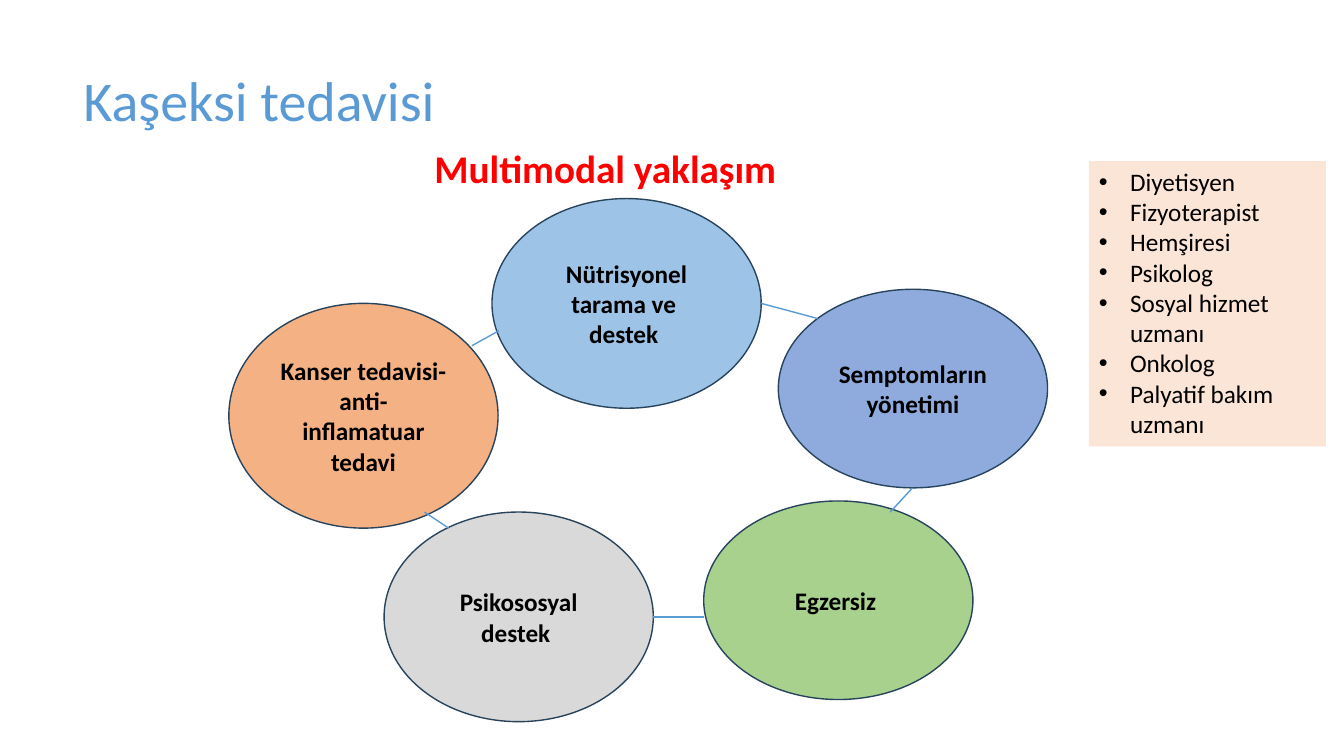
import pptx
import pptx.util
import pptx.dml.color
import pptx.enum.shapes
import pptx.enum.text
import pptx.oxml
import pptx.oxml.ns
from lxml import etree

PX = 9144
COLORS = {
    "title": "5B9BD5", "accent": "FF0000", "text": "000000",
    "outline": "28445D", "link": "5B9BD5", "team": "FBE5D6",
    "nutrition": "9DC3E6", "cancer": "F4B183", "exercise": "A9D18E",
    "symptoms": "8FAADC", "psychosocial": "D9D9D9",
}
ALIGN = pptx.enum.text.PP_ALIGN
ANCHOR = pptx.enum.text.MSO_ANCHOR
SHAPE = pptx.enum.shapes.MSO_SHAPE


def px(*lengths):
    return [pptx.util.Emu(length * PX) for length in lengths]


def color(name):
    return pptx.dml.color.RGBColor.from_string(COLORS[name])


class SlideBuilder:
    font = "Calibri"
    body_size = 18

    def __init__(self, slide):
        self.slide = slide

    def add_lines(self, frame, lines, size, ink, bold=False, align=ALIGN.LEFT,
                  anchor=ANCHOR.TOP):
        frame.word_wrap = True
        frame.vertical_anchor = anchor
        for index, line in enumerate(lines):
            paragraph = frame.add_paragraph() if index else frame.paragraphs[0]
            paragraph.alignment = align
            run = paragraph.add_run()
            run.text = line
            run.font.name = self.font
            run.font.size = pptx.util.Pt(size)
            run.font.bold = bold
            run.font.color.rgb = color(ink)

    def text(self, box, line, size, ink, **style):
        label = self.slide.shapes.add_textbox(*px(*box))
        self.add_lines(label.text_frame, [line], size, ink, **style)
        return label

    def panel(self, kind, box, fill):
        panel = self.slide.shapes.add_shape(kind, *px(*box))
        panel.shadow.inherit = False
        panel.fill.solid()
        panel.fill.fore_color.rgb = color(fill)
        panel.line.fill.background()
        return panel

    def ellipse(self, box, fill, lines):
        ellipse = self.panel(SHAPE.OVAL, box, fill)
        ellipse.line.color.rgb = color("outline")
        ellipse.line.width = pptx.util.Pt(1)
        self.add_lines(ellipse.text_frame, lines, self.body_size, "text", bold=True,
                       align=ALIGN.CENTER, anchor=ANCHOR.MIDDLE)

    def link(self, start, end):
        link = self.slide.shapes.add_connector(
            pptx.enum.shapes.MSO_CONNECTOR.STRAIGHT, *px(*start, *end))
        link.line.color.rgb = color("link")
        link.line.width = pptx.util.Pt(1)
        etree.SubElement(link._element.spPr, pptx.oxml.ns.qn("a:effectLst"))

    def bullets(self, box, fill, items):
        panel = self.panel(SHAPE.RECTANGLE, box, fill)
        self.add_lines(panel.text_frame, items, self.body_size, "text")
        indent = px(31)[0]
        for paragraph in panel.text_frame.paragraphs:
            properties = paragraph._p.get_or_add_pPr()
            properties.set("marL", str(indent))
            properties.set("indent", str(-indent))
            font = etree.SubElement(properties, pptx.oxml.ns.qn("a:buFont"))
            font.set("typeface", "Arial")
            bullet = etree.SubElement(properties, pptx.oxml.ns.qn("a:buChar"))
            bullet.set("char", "•")


def main():
    deck = pptx.Presentation()
    deck.slide_width, deck.slide_height = px(1333, 750)
    builder = SlideBuilder(deck.slides.add_slide(deck.slide_layouts[6]))

    title = builder.text((73, 30, 1150, 145), "Kaşeksi tedavisi", 40, "title",
                         anchor=ANCHOR.MIDDLE)
    title.text_frame.paragraphs[0].line_spacing = 0.9

    width = 267
    approaches = [
        (488, 197, 208, "nutrition", ["Nütrisyonel tarama ve ", "destek "]),
        (227, 301, 223, "cancer", ["Kanser tedavisi-anti-inflamatuar tedavi"]),
        (698, 497, 197, "exercise", ["Egzersiz "]),
        (772, 287, 197, "symptoms", ["Semptomların yönetimi"]),
        (381, 508, 208, "psychosocial", ["Psikososyal destek "]),
    ]
    for left, top, height, fill, lines in approaches:
        builder.ellipse((left, top, width, height), fill, lines)

    builder.text((421, 138, 402, 57), "Multimodal yaklaşım", 28, "accent", bold=True)

    links = [
        ((468, 343), (495, 328)),
        ((755, 301), (811, 316)),
        ((421, 508), (445, 524)),
        ((648, 612), (698, 612)),
        ((883, 508), (905, 484)),
    ]
    for start, end in links:
        builder.link(start, end)

    builder.bullets((1080, 160, 235, 283), "team", [
        "Diyetisyen", "Fizyoterapist", "Hemşiresi", "Psikolog",
        "Sosyal hizmet uzmanı", "Onkolog", "Palyatif bakım uzmanı",
    ])
    deck.save("out.pptx")


if __name__ == "__main__":
    main()
